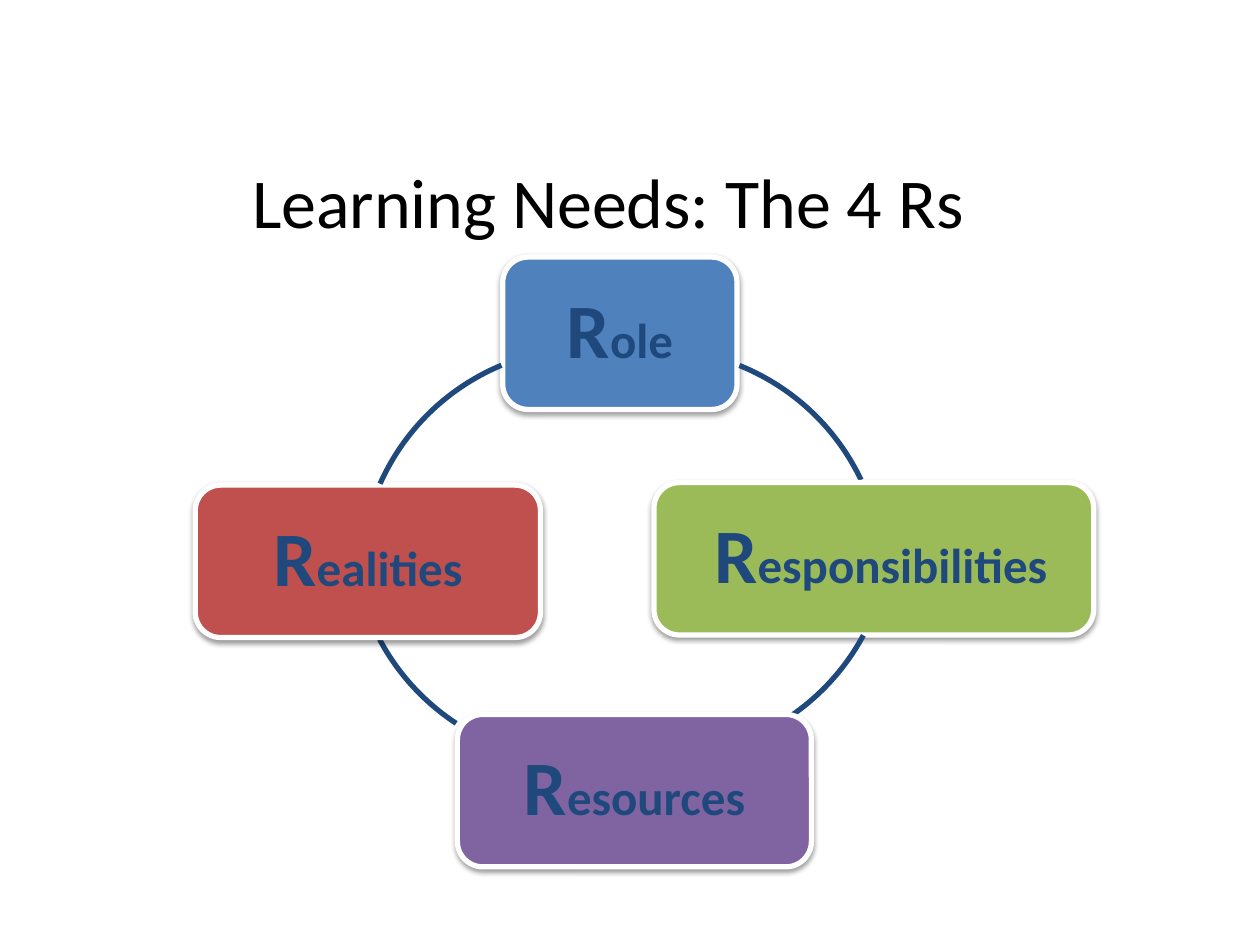
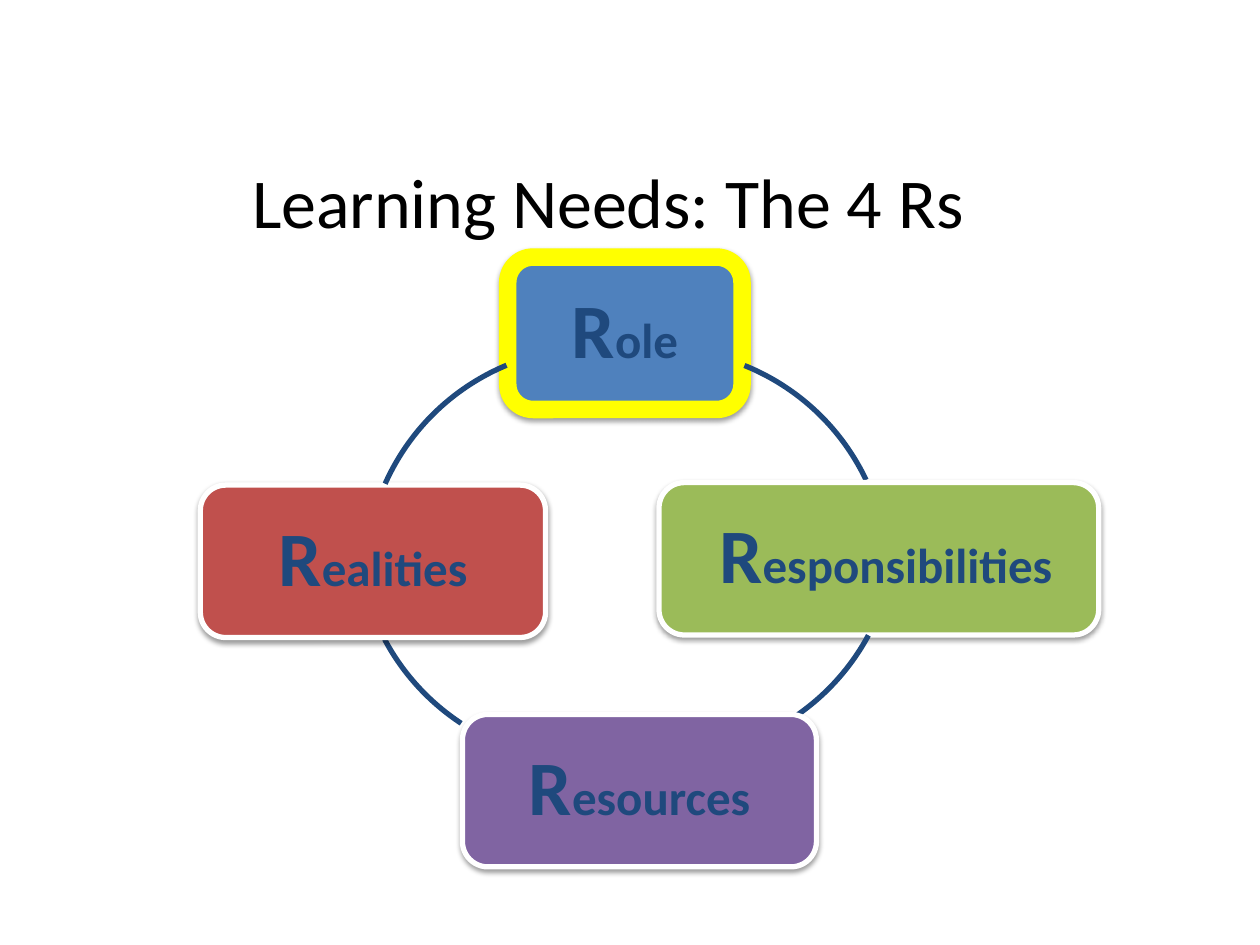
import lxml.etree
import pptx
import pptx.dml.color
import pptx.enum.shapes
import pptx.enum.text
import pptx.oxml.ns
import pptx.util

Inches = pptx.util.Inches
Pt = pptx.util.Pt
RGBColor = pptx.dml.color.RGBColor
Shapes = pptx.enum.shapes.MSO_SHAPE
Align = pptx.enum.text.PP_ALIGN
Anchor = pptx.enum.text.MSO_ANCHOR
qn = pptx.oxml.ns.qn

BLACK = RGBColor(0x00, 0x00, 0x00)
WHITE = RGBColor(0xFF, 0xFF, 0xFF)
YELLOW = RGBColor(0xFF, 0xFF, 0x00)
NAVY = RGBColor(0x1F, 0x49, 0x7D)
BLUE = RGBColor(0x4F, 0x81, 0xBD)
GREEN = RGBColor(0x9B, 0xBB, 0x59)
PURPLE = RGBColor(0x80, 0x64, 0xA2)
RED = RGBColor(0xC0, 0x50, 0x4D)

BOX_HEIGHT = 1.21
RING_SIZE = 3.64
TITLE = "Learning Needs: The 4 Rs"

# label, fill, left, top, width, left inset, right inset
NEEDS = [
    ("Role", BLUE, (3.99, 2.04, 1.86), (0.18, 0.18)),
    ("Responsibilities", GREEN, (5.19, 3.83, 3.49), (0.26, 0.15)),
    ("Resources", PURPLE, (3.63, 5.67, 2.81), (0.18, 0.18)),
    ("Realities", RED, (1.55, 3.85, 2.74), (0.18, 0.18)),
]
# left, top, start angle, end angle
ARCS = [
    (3.37, 2.77, 291.9, 334.6),
    (3.43, 2.36, 28.3, 55.1),
    (2.8, 2.4, 123.3, 152),
    (2.86, 2.76, 204, 247.4),
]


class Painter:
    font = "Calibri"

    def __init__(self, deck):
        self.deck = deck
        self.page = None

    def new_page(self):
        self.page = self.deck.slides.add_slide(self.deck.slide_layouts[6])

    def set_format(self, target, values):
        for name, value in values.items():
            setattr(target, name, value)

    def add_span(self, para, text, size, color, bold=False):
        span = para.add_run()
        span.text = text
        self.set_format(span.font, {"name": self.font, "size": Pt(size), "bold": bold})
        span.font.color.rgb = color

    def prepare_text(self, box, insets):
        left, right = insets
        self.set_format(box.text_frame, {
            "word_wrap": True,
            "vertical_anchor": Anchor.MIDDLE,
            "margin_left": Inches(left),
            "margin_right": Inches(right),
        })
        para = box.text_frame.paragraphs[0]
        para.alignment = Align.CENTER
        return para

    def add_title(self, text):
        box = self.page.shapes.add_textbox(Inches(0.5), Inches(0.97), Inches(9), Inches(1.25))
        self.add_span(self.prepare_text(box, (0.1, 0.45)), text, 40, BLACK)

    def add_outline(self, shape, color, width):
        shape.line.color.rgb = color
        shape.line.width = Pt(width)
        shape.shadow.inherit = False

    def add_shadow(self, shape):
        effects = shape._element.spPr.find(qn("a:effectLst"))
        shadow = lxml.etree.SubElement(effects, qn("a:outerShdw"), {
            "blurRad": str(Pt(3.1)), "dist": str(Pt(1.6)),
            "dir": "5400000", "rotWithShape": "0",
        })
        color = lxml.etree.SubElement(shadow, qn("a:srgbClr"), val="000000")
        lxml.etree.SubElement(color, qn("a:alpha"), val="38000")

    def add_need(self, label, fill, place, insets, outline):
        left, top, width = place
        box = self.page.shapes.add_shape(
            Shapes.ROUNDED_RECTANGLE,
            Inches(left), Inches(top), Inches(width), Inches(BOX_HEIGHT))
        box.fill.solid()
        box.fill.fore_color.rgb = fill
        self.add_outline(box, *outline)
        self.add_shadow(box)
        para = self.prepare_text(box, insets)
        para.line_spacing = 0.9
        self.add_span(para, label[0], 44, NAVY, True)
        self.add_span(para, label[1:], 28, NAVY, True)

    def add_arc(self, left, top, start, end):
        arc = self.page.shapes.add_shape(
            Shapes.ARC, Inches(left), Inches(top), Inches(RING_SIZE), Inches(RING_SIZE))
        for index, angle in enumerate((start, end)):
            arc.adjustments[index] = angle * 0.6
        arc.fill.background()
        self.add_outline(arc, NAVY, 3)

    def add_cycle(self, shift, highlight):
        for (label, fill, (left, top, width), insets), arc in zip(NEEDS, ARCS):
            outline = (YELLOW, 10) if label == highlight else (WHITE, 3)
            self.add_need(label, fill, (left + shift, top, width), insets, outline)
            arc_left, *rest = arc
            self.add_arc(arc_left + shift, *rest)


def main():
    deck = pptx.Presentation()
    deck.slide_width = Inches(10)
    deck.slide_height = Inches(7.5)
    painter = Painter(deck)
    for shift, highlight in ((0, None), (0.04, "Role")):
        painter.new_page()
        painter.add_title(TITLE)
        painter.add_cycle(shift, highlight)
    deck.save("out.pptx")


if __name__ == "__main__":
    main()
